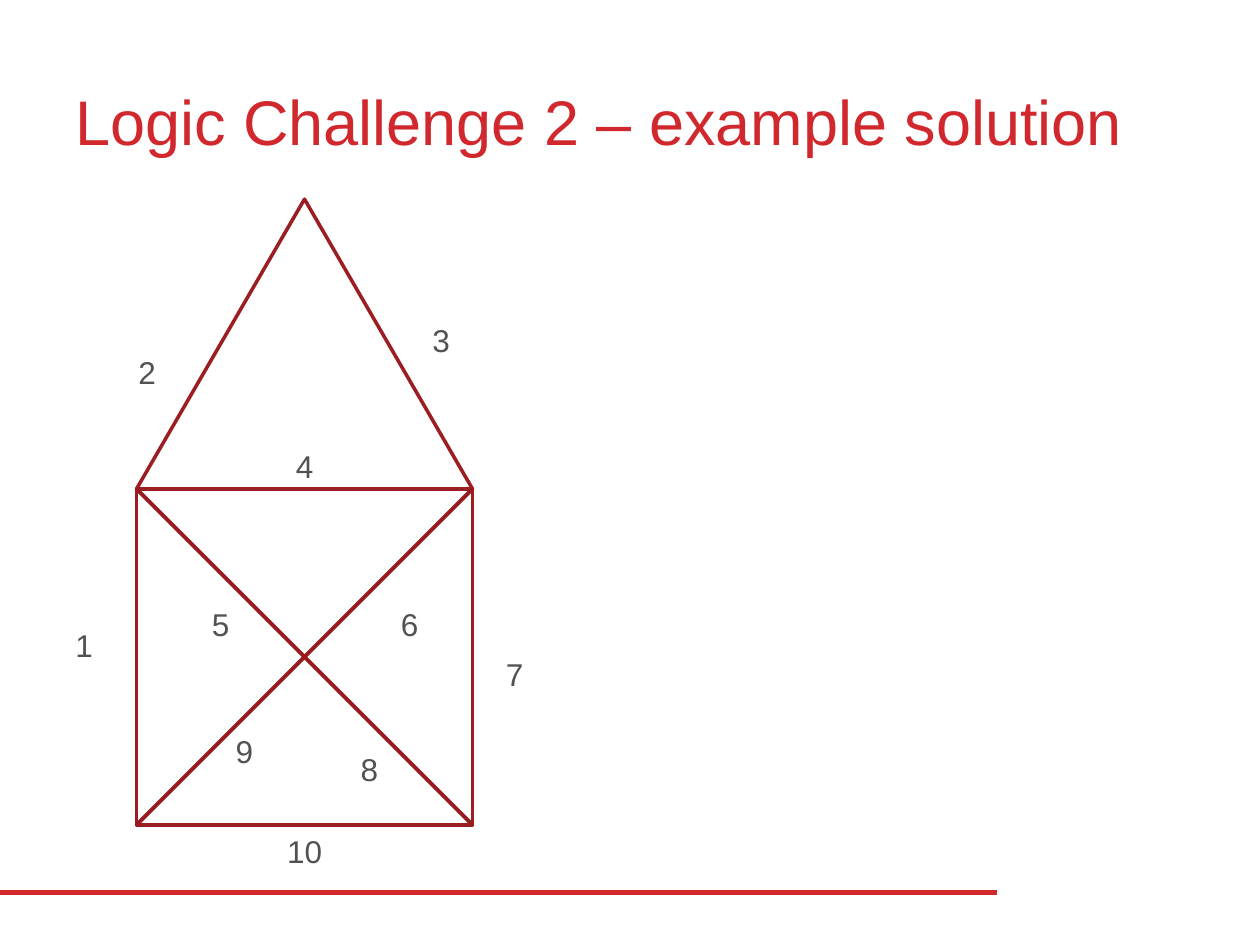
from pptx import Presentation
from pptx.dml.color import RGBColor
from pptx.enum.shapes import MSO_CONNECTOR, MSO_SHAPE
from pptx.enum.text import MSO_ANCHOR, MSO_AUTO_SIZE
from pptx.util import Pt
from lxml import etree

RECTANGLE = MSO_SHAPE.RECTANGLE
TRIANGLE = MSO_SHAPE.ISOSCELES_TRIANGLE
STRAIGHT = MSO_CONNECTOR.STRAIGHT
MIDDLE, TOP = MSO_ANCHOR.MIDDLE, MSO_ANCHOR.TOP
GROW = MSO_AUTO_SIZE.SHAPE_TO_FIT_TEXT
DRAWING = "http://schemas.openxmlformats.org/drawingml/2006/main"

RED, WALL_RED, DIAGONAL_RED, GREY = "D1282E", "9B1E22", "991A1F", "525252"

# Stroke number and the left and top of its label, relative to the house
STROKE_LABELS = [
    ("1", -42, 240.4), ("2", -6, 84.2), ("3", 162, 66.2), ("4", 84, 138.2),
    ("5", 36, 228.2), ("6", 144, 228.2), ("7", 204, 257), ("8", 121, 311),
    ("9", 49.5, 301), ("10", 79, 357.8),
]


def color(hex_code):
    return RGBColor.from_string(hex_code)


def add_text(page, text, left, top, width, height, size, ink, anchor=TOP, wrap=True):
    box = page.shapes.add_textbox(Pt(left), Pt(top), Pt(width), Pt(height))
    frame = box.text_frame
    frame.word_wrap = wrap
    frame.vertical_anchor = anchor
    if not wrap:
        frame.auto_size = GROW
    span = frame.paragraphs[0].add_run()
    span.text = text
    span.font.name = "Arial"
    span.font.size = Pt(size)
    span.font.color.rgb = color(ink)


def add_line(page, start, end, ink, weight):
    line = page.shapes.add_connector(STRAIGHT, *map(Pt, start + end))
    line.line.color.rgb = color(ink)
    line.line.width = Pt(weight)
    etree.SubElement(line._element.spPr, f"{{{DRAWING}}}effectLst")


def add_outline(shapes, kind, left, top, width, height):
    shape = shapes.add_shape(kind, Pt(left), Pt(top), Pt(width), Pt(height))
    shape.shadow.inherit = False
    shape.fill.background()
    shape.line.color.rgb = color(WALL_RED)
    shape.line.width = Pt(2)


def add_house(page, left, top, side, roof_height):
    """Draw a square with both diagonals under a triangular roof."""
    eaves = top + roof_height
    right, floor = left + side, eaves + side
    house = page.shapes.add_group_shape()
    add_outline(house.shapes, RECTANGLE, left, eaves, side, side)
    add_outline(house.shapes, TRIANGLE, left, top, side, roof_height)
    add_line(page, (left, floor), (right, eaves), DIAGONAL_RED, 2.25)
    add_line(page, (right, floor), (left, eaves), DIAGONAL_RED, 2.25)


def add_stroke_labels(page, left, top):
    for number, x, y in STROKE_LABELS:
        width = 14.4 + 10 * len(number)
        add_text(page, number, left + x, top + y, width, 29, 18, GREY, wrap=False)


def main():
    deck = Presentation()
    deck.slide_width, deck.slide_height = Pt(720), Pt(540)
    page = deck.slides.add_slide(deck.slide_layouts[6])
    add_line(page, (0, 510), (570, 510), RED, 3)
    add_text(page, "Logic Challenge 2 – example solution",
             36, 24, 648, 90, 36, RED, anchor=MIDDLE)
    house_left, house_top = 78, 113.8
    add_house(page, house_left, house_top, 192, 165.6)
    add_stroke_labels(page, house_left, house_top)
    deck.save("out.pptx")


if __name__ == "__main__":
    main()
